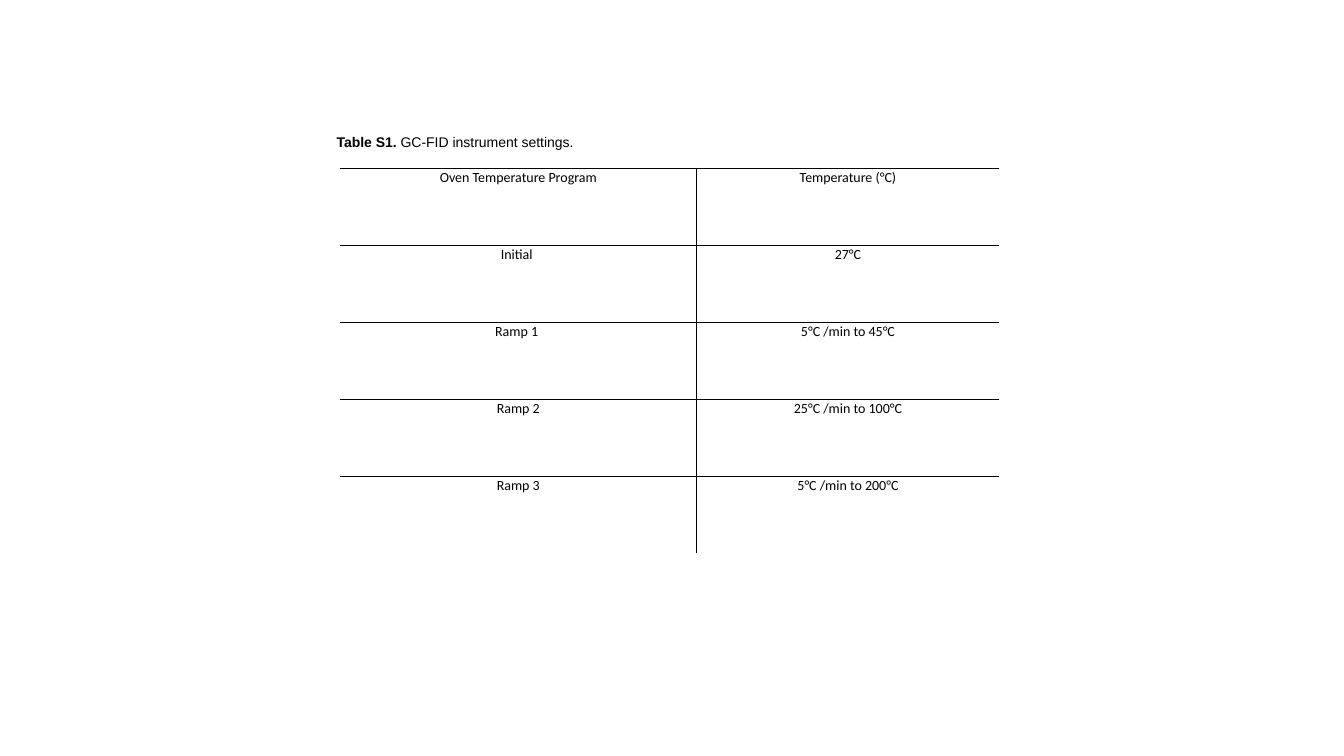
from lxml import etree
from pptx import Presentation
from pptx.dml.color import RGBColor
from pptx.enum import text
from pptx.oxml import ns
from pptx.util import Inches, Pt

BLACK = RGBColor(0x00, 0x00, 0x00)
COLUMN_WIDTHS = (3.54, 3)
ROW_HEIGHT = 0.764
SETTINGS = (
    ("Oven Temperature Program", "Temperature (°C)"),
    ("Initial ", "27°C"),
    ("Ramp 1 ", "5°C /min to 45°C"),
    ("Ramp 2", "25°C /min to 100°C"),
    ("Ramp 3", "5°C /min to 200°C"),
)


def add_span(para, content, font="Calibri", size=10, bold=False, color=BLACK):
    span = para.add_run()
    span.text = content
    span.font.name = font
    span.font.size = Pt(size)
    span.font.bold = bold
    span.font.color.rgb = color


def add_caption(page, label, title):
    box = page.shapes.add_textbox(Inches(3.24), Inches(1.28), Inches(5.76), Inches(0.27))
    frame = box.text_frame
    frame.word_wrap = True
    frame.auto_size = text.MSO_AUTO_SIZE.SHAPE_TO_FIT_TEXT
    para = frame.paragraphs[0]
    add_span(para, label, font="Arial", bold=True)
    add_span(para, title, font="Arial")


def set_borders(cell, visible_sides, color=BLACK):
    properties = cell._tc.get_or_add_tcPr()
    for side in "LRTB":
        line = etree.SubElement(properties, ns.qn(f"a:ln{side}"), w=str(Pt(1)))
        if side in visible_sides:
            fill = etree.SubElement(line, ns.qn("a:solidFill"))
            etree.SubElement(fill, ns.qn("a:srgbClr"), val=str(color))
        else:
            etree.SubElement(line, ns.qn("a:noFill"))


def fill_cell(cell, content, visible_sides):
    set_borders(cell, visible_sides)
    cell.fill.background()
    cell.margin_left = cell.margin_right = Inches(0.07)
    cell.margin_top = cell.margin_bottom = 0
    para = cell.text_frame.paragraphs[0]
    para.alignment = text.PP_ALIGN.CENTER
    para.line_spacing = 1.07
    add_span(para, content)


def add_settings_table(page):
    table = page.shapes.add_table(
        len(SETTINGS), len(COLUMN_WIDTHS), Inches(3.37), Inches(1.67),
        Inches(sum(COLUMN_WIDTHS)), Inches(ROW_HEIGHT * len(SETTINGS)),
    ).table
    table.first_row = False
    table.horz_banding = False
    for column, width in zip(table.columns, COLUMN_WIDTHS):
        column.width = Inches(width)
    for index, values in enumerate(SETTINGS):
        table.rows[index].height = Inches(ROW_HEIGHT)
        horizontal = "T" if index == len(SETTINGS) - 1 else "TB"
        for cell, content, divider in zip(table.rows[index].cells, values, "RL"):
            fill_cell(cell, content, horizontal + divider)


def main():
    deck = Presentation()
    deck.slide_width = Inches(13.33)
    deck.slide_height = Inches(7.5)
    page = deck.slides.add_slide(deck.slide_layouts[6])
    add_settings_table(page)
    add_caption(page, "Table S1. ", "GC-FID instrument settings.")
    deck.save("out.pptx")


if __name__ == "__main__":
    main()
